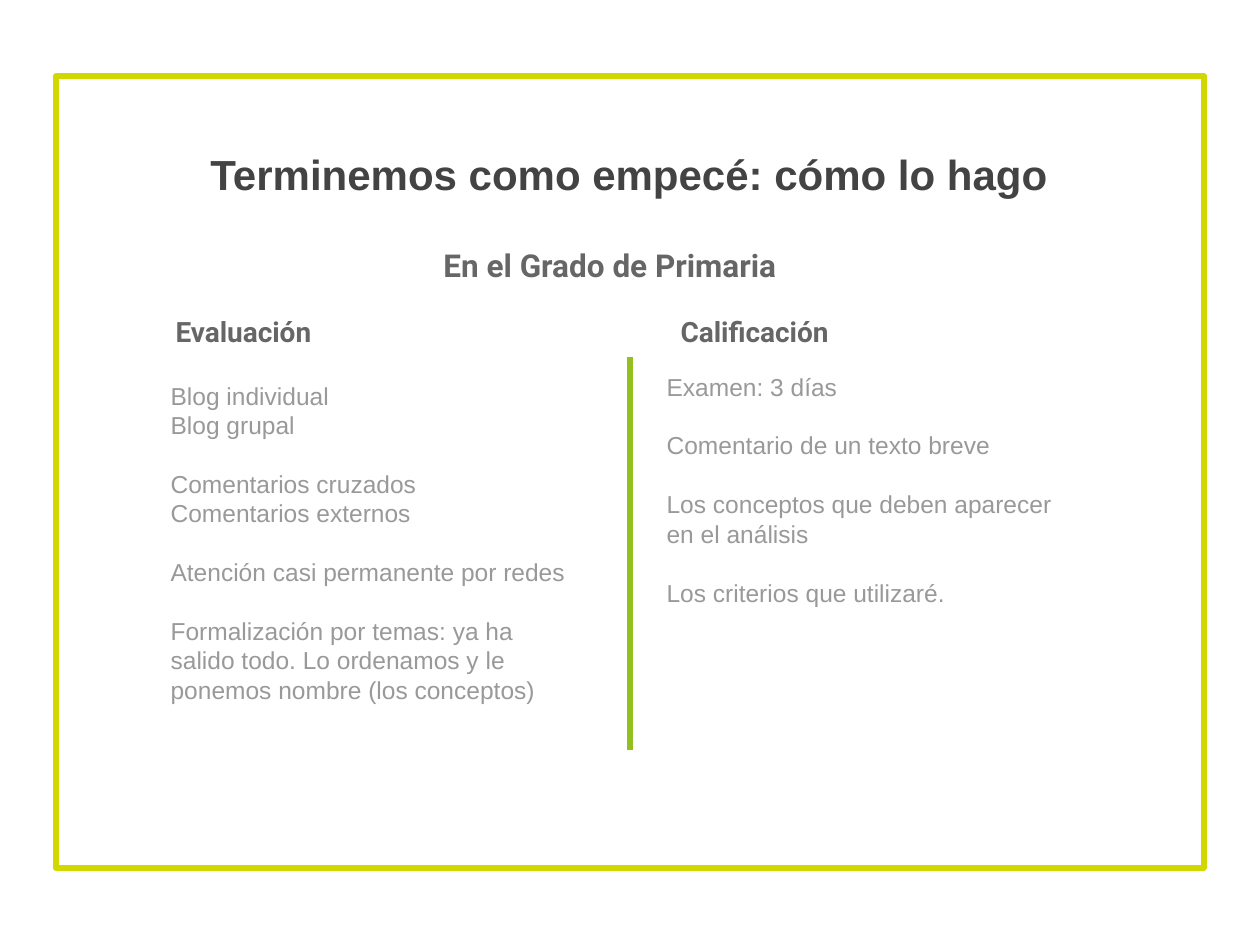
"""Build a slide with a title and two columns, grading against marks."""
import dataclasses
import pptx
import pptx.dml.color
import pptx.enum.shapes
import pptx.enum.text
import pptx.oxml
import pptx.oxml.ns
import pptx.util

INK = {
    "frame": "D2D700", "rule": "93C01F",
    "title": "434343", "head": "666666", "body": "999999",
}
LINE = 16.8
ALIGN = pptx.enum.text.PP_ALIGN
ANCHOR = pptx.enum.text.MSO_ANCHOR


@dataclasses.dataclass
class Column:
    """One column: heading, groups of lines, and their places in px."""
    head: str
    groups: list[list[str]]
    left: int
    top: int
    edge: int
    slots: tuple[int, int]


COLUMNS = [
    Column("Evaluación", [
        ["Blog individual", "Blog grupal"],
        ["Comentarios cruzados", "Comentarios externos"],
        ["Atención casi permanente por redes"],
        ["Formalización por temas: ya ha salido todo. "
         "Lo ordenamos y le ponemos nombre (los conceptos)"],
    ], 158, 368, 163, (1, 2)),
    Column("Calificación", [
        ["Examen: 3 días"],
        ["Comentario de un texto breve"],
        ["Los conceptos que deben aparecer en el análisis"],
        ["Los criterios que utilizaré."],
    ], 654, 359, 668, (3, 4)),
]


def px(num: int) -> int:
    """Turn px into EMU."""
    return pptx.util.Emu(round(num * 914400 / 126))


def color(name: str) -> pptx.dml.color.RGBColor:
    """Look up a colour by its role."""
    return pptx.dml.color.RGBColor.from_string(INK[name])


def place(shape, left: int, top: int, width: int, height: int) -> None:
    """Move and size a shape in px."""
    shape.left, shape.top = px(left), px(top)
    shape.width, shape.height = px(width), px(height)


def write(shape, groups: list[list[str]], *, size: int, ink: str,
          font: str = "Arial", bold: bool = False, align=ALIGN.LEFT,
          anchor=ANCHOR.TOP, line: float | None = None) -> None:
    """Fill a shape with groups of lines, one blank line's space apart."""
    frame = shape.text_frame
    frame.word_wrap = True
    frame.auto_size = pptx.enum.text.MSO_AUTO_SIZE.NONE
    frame.vertical_anchor = anchor
    for side in ("left", "top", "right", "bottom"):
        setattr(frame, f"margin_{side}", pptx.util.Inches(0.1))
    rows = [(text, row == 0 and num > 0)
            for num, group in enumerate(groups)
            for row, text in enumerate(group)]
    for num, (text, gap) in enumerate(rows):
        para = frame.add_paragraph() if num else frame.paragraphs[0]
        para.alignment = align
        para.space_before = pptx.util.Pt(LINE if gap else 0)
        para.space_after = pptx.util.Pt(0)
        if line:
            para.line_spacing = pptx.util.Pt(line)
        props = para._p.get_or_add_pPr()
        props.set("marL", "0")
        props.set("indent", "0")
        props.append(pptx.oxml.parse_xml(
            f"<a:buNone {pptx.oxml.ns.nsdecls('a')}/>"))
        run = para.add_run()
        run.text = text
        run.font.name, run.font.size = font, pptx.util.Pt(size)
        run.font.bold = bold
        run.font.color.rgb = color(ink)


def stroke(shape, ink: str) -> None:
    """Give a shape its outline."""
    shape.line.color.rgb = color(ink)
    shape.line.width = pptx.util.Pt(3)


def column(slide, col: Column) -> None:
    """Draw one column in its heading and body slots."""
    slots = {item.placeholder_format.idx: item for item in slide.placeholders}
    head, body = (slots[num] for num in col.slots)
    place(head, col.edge, 304, 437, 57)
    write(head, [[col.head]], size=16, ink="head", font="Roboto",
          bold=True, anchor=ANCHOR.BOTTOM)
    place(body, col.left, col.top, 427, 391)
    write(body, col.groups, size=14, ink="body", line=LINE)


def main() -> None:
    """Build and save the slide."""
    deck = pptx.Presentation()
    deck.slide_width, deck.slide_height = px(1260), px(945)
    slide = deck.slides.add_slide(deck.slide_layouts[4])
    shapes = slide.shapes

    frame = shapes.add_shape(
        pptx.enum.shapes.MSO_SHAPE.RECTANGLE, 0, 0, 0, 0)
    place(frame, 56, 76, 1148, 792)
    frame.shadow.inherit = False
    frame.fill.background()
    stroke(frame, "frame")

    title = shapes.title
    place(title, -1, 134, 1260, 88)
    write(title, [["Terminemos como empecé: cómo lo hago"]], size=24,
          ink="title", bold=True, align=ALIGN.CENTER, line=30)

    sub = shapes.add_textbox(0, 0, 0, 0)
    place(sub, 431, 239, 437, 57)
    write(sub, [["En el Grado de Primaria"]], size=18, ink="head",
          font="Roboto", bold=True, anchor=ANCHOR.BOTTOM)

    for col in COLUMNS:
        column(slide, col)

    rule = shapes.add_connector(
        pptx.enum.shapes.MSO_CONNECTOR.STRAIGHT,
        px(630), px(357), px(630), px(750))
    stroke(rule, "rule")
    rule._element.spPr.append(pptx.oxml.parse_xml(
        f"<a:effectLst {pptx.oxml.ns.nsdecls('a')}/>"))
    deck.save("out.pptx")


if __name__ == "__main__":
    main()
